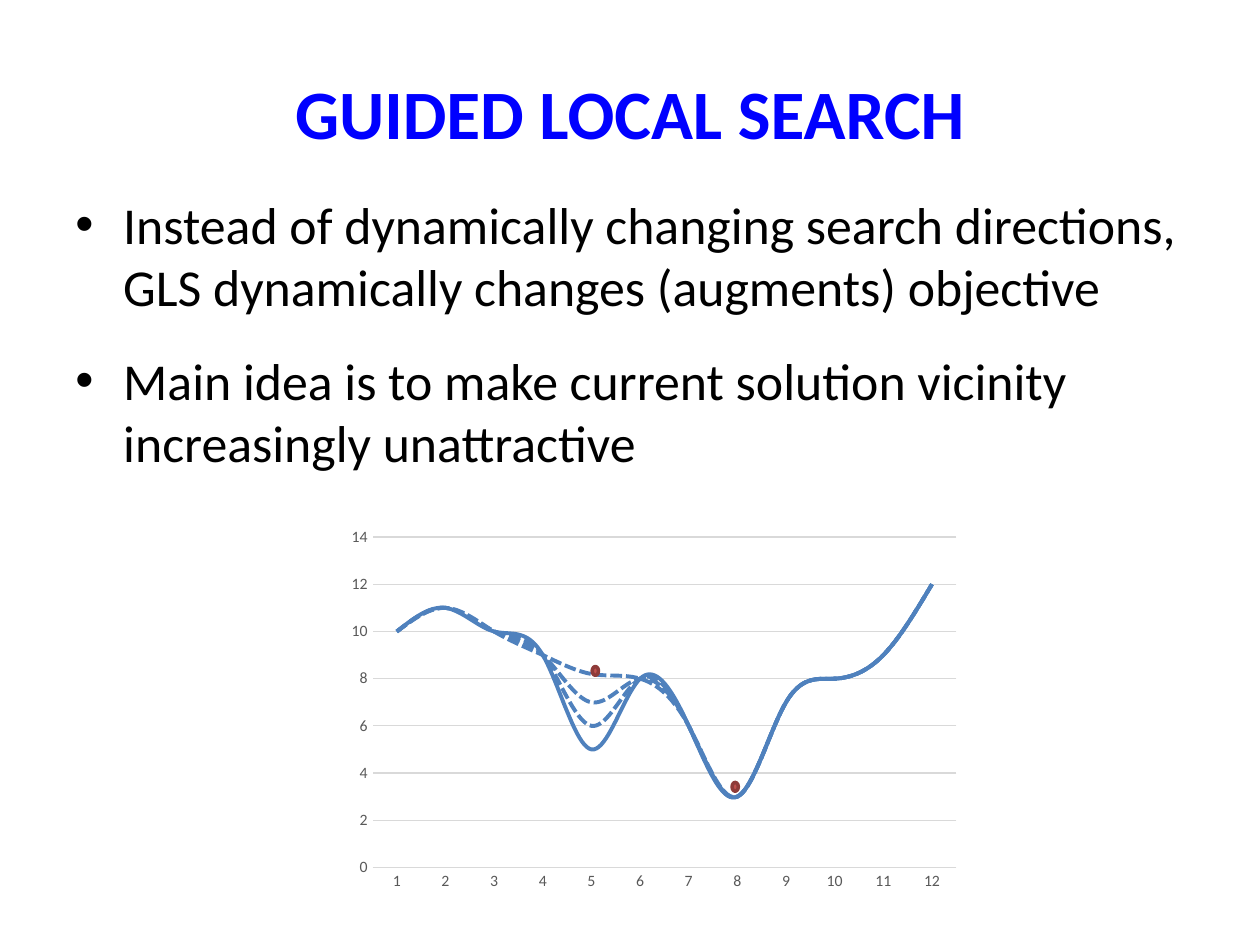
from typing import NamedTuple

from lxml.etree import SubElement
from pptx import Presentation
from pptx.chart.data import CategoryChartData
from pptx.dml.color import RGBColor
from pptx.enum.chart import XL_CHART_TYPE, XL_MARKER_STYLE, XL_TICK_MARK
from pptx.enum.dml import MSO_LINE
from pptx.enum.shapes import MSO_SHAPE
from pptx.enum.text import MSO_ANCHOR, MSO_AUTO_SIZE, PP_ALIGN
from pptx.oxml.ns import qn
from pptx.util import Inches, Pt

FONT = "Calibri"
BLUE = "4F81BD"
GRID = "D9D9D9"
OBJECTIVE = [10, 11, 10, 9, 5, 8, 6, 3, 7, 8, 9, 12]
LOCAL_MINIMUM = 4
AUGMENTED_MINIMA = [5, 6, 7, 8.2]
BULLETS = [
    "Instead of dynamically changing search directions, "
    "GLS dynamically changes (augments) objective",
    "Main idea is to make current solution vicinity increasingly unattractive",
]


class Box(NamedTuple):
    left: float
    top: float
    width: float
    height: float

    def lengths(self):
        return tuple(Inches(value) for value in self)


SOLUTIONS = [Box(4.7, 5.29, 0.05, 0.07), Box(5.81, 6.21, 0.05, 0.07)]


def color(value: str) -> RGBColor:
    return RGBColor.from_string(value)


def set_font(font, size: float, value: str, bold: bool = False) -> None:
    font.name = FONT
    font.size = Pt(size)
    font.bold = bold
    font.color.rgb = color(value)


def set_line(line, value: str, width: float) -> None:
    line.color.rgb = color(value)
    line.width = Pt(width)


def add_title(slide, box: Box, text: str) -> None:
    title = slide.shapes.title
    title.left, title.top, title.width, title.height = box.lengths()
    frame = title.text_frame
    frame.text = text
    frame.auto_size = MSO_AUTO_SIZE.NONE
    frame.vertical_anchor = MSO_ANCHOR.MIDDLE
    paragraph = frame.paragraphs[0]
    paragraph.alignment = PP_ALIGN.CENTER
    set_font(paragraph.font, 39.6, "0000FF", bold=True)


def add_bullets(slide, box: Box, texts: list[str]) -> None:
    frame = slide.shapes.add_textbox(*box.lengths()).text_frame
    frame.word_wrap = True
    frame.text = "\n".join(texts)
    for index, paragraph in enumerate(frame.paragraphs):
        paragraph.space_before = Pt(18 if index else 0)
        set_font(paragraph.font, 29.6, "000000")
        properties = paragraph._p.get_or_add_pPr()
        properties.set("marL", str(Inches(0.38)))
        properties.set("indent", str(-Inches(0.38)))
        bullet_font = SubElement(properties, qn("a:buFont"), typeface="Arial")
        bullet_font.addnext(SubElement(properties, qn("a:buChar"), char="•"))
        properties.append(properties.find(qn("a:defRPr")))


def add_objective_chart(slide, box: Box) -> None:
    data = CategoryChartData()
    data.categories = [str(number + 1) for number in range(len(OBJECTIVE))]
    for number, minimum in enumerate(AUGMENTED_MINIMA, start=1):
        values = OBJECTIVE.copy()
        values[LOCAL_MINIMUM] = minimum
        data.add_series(f"Series {number}", values)
    chart = slide.shapes.add_chart(XL_CHART_TYPE.LINE, *box.lengths(), data).chart
    chart.has_legend = False
    chart.has_title = False
    set_font(chart.font, 10, "000000")
    for axis in (chart.category_axis, chart.value_axis):
        axis.major_tick_mark = axis.minor_tick_mark = XL_TICK_MARK.NONE
        set_font(axis.tick_labels.font, 9, "595959")
    set_line(chart.category_axis.format.line, GRID, 0.75)
    chart.value_axis.format.line.fill.background()
    set_line(chart.value_axis.major_gridlines.format.line, GRID, 0.75)
    chart.plots[0].vary_by_categories = False
    for index, series in enumerate(chart.plots[0].series):
        series.smooth = True
        series.marker.style = XL_MARKER_STYLE.NONE
        set_line(series.format.line, BLUE, 2.25)
        if index:
            series.format.line.dash_style = MSO_LINE.SQUARE_DOT


def add_solution(slide, box: Box) -> None:
    shape = slide.shapes.add_shape(MSO_SHAPE.OVAL, *box.lengths())
    shape.shadow.inherit = False
    shape.fill.solid()
    shape.fill.fore_color.rgb = color("C0504D")
    set_line(shape.line, "8E3B39", 2)


def main() -> None:
    presentation = Presentation()
    presentation.slide_width, presentation.slide_height = Inches(10), Inches(7.5)
    slide = presentation.slides.add_slide(
        presentation.slide_layouts.get_by_name("Title Only")
    )
    add_title(slide, Box(0.5, 0.5, 9, 0.78), "GUIDED LOCAL SEARCH")
    add_objective_chart(slide, Box(2.69, 4.13, 5, 3))
    for box in SOLUTIONS:
        add_solution(slide, box)
    add_bullets(slide, Box(0.5, 1.48, 9.5, 2.53), BULLETS)
    presentation.save("out.pptx")


if __name__ == "__main__":
    main()
